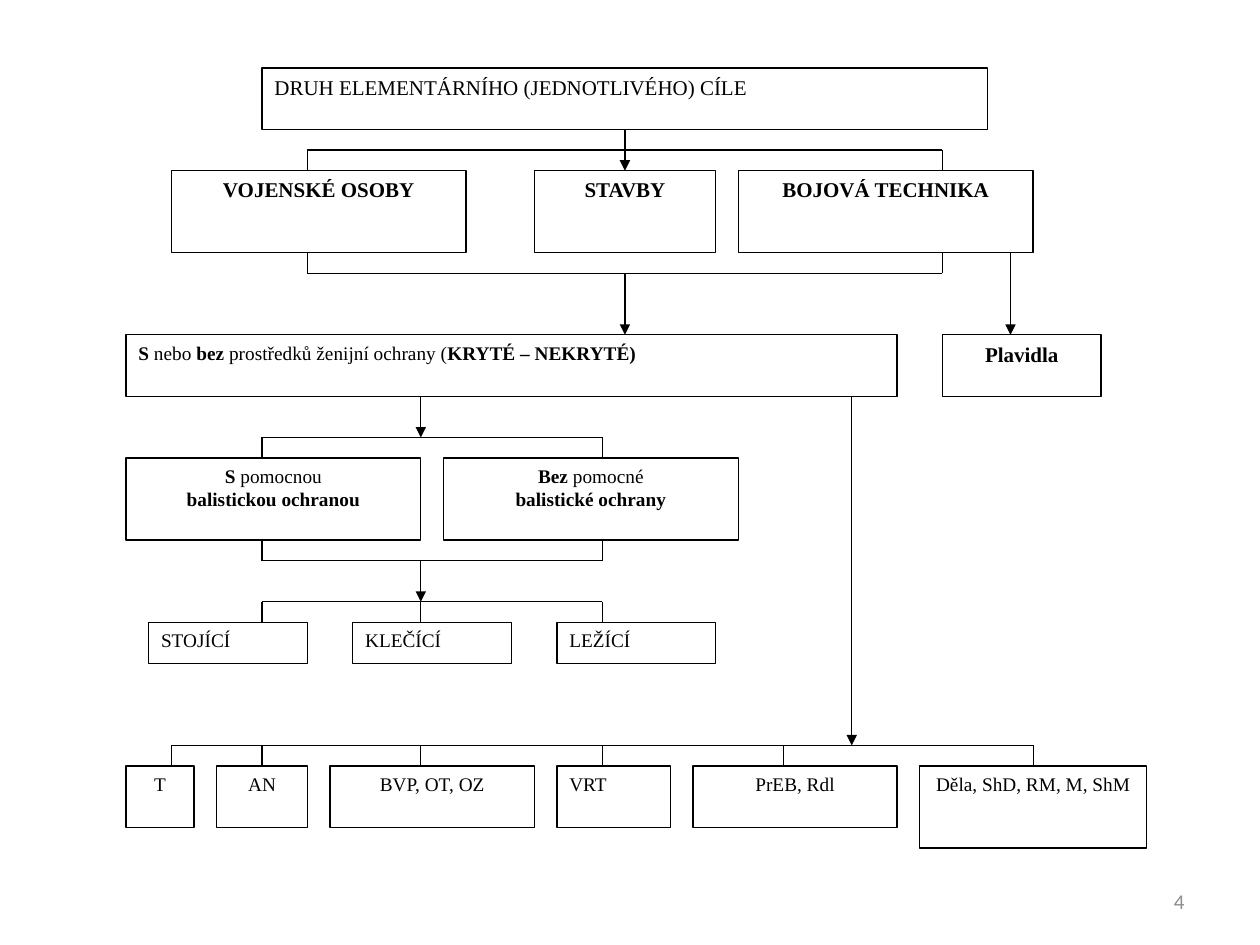
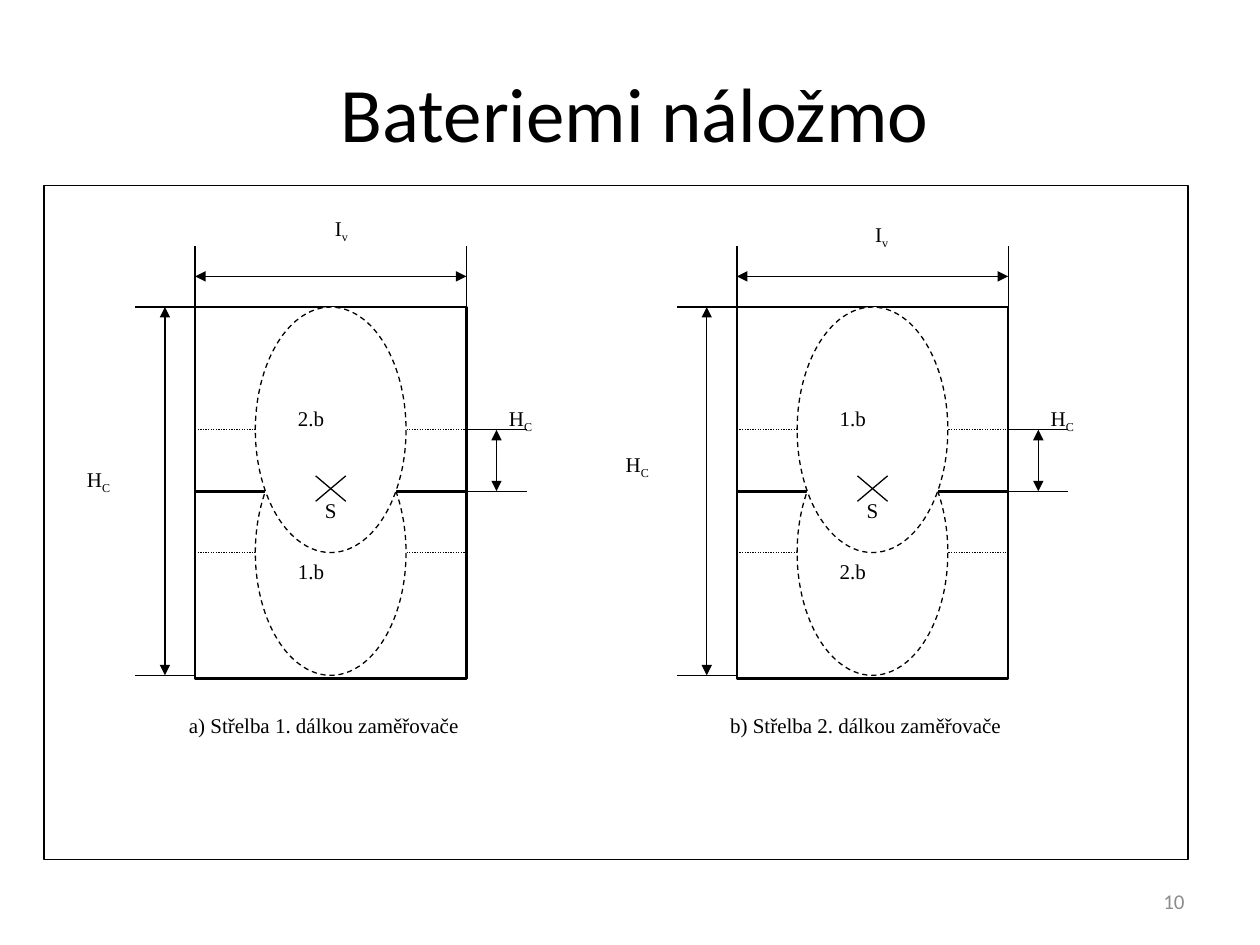
from dataclasses import dataclass

from lxml import etree
from pptx import Presentation
from pptx.dml.color import RGBColor
from pptx.enum.dml import MSO_LINE
from pptx.enum.shapes import MSO_CONNECTOR, MSO_SHAPE
from pptx.enum.text import MSO_ANCHOR, PP_ALIGN
from pptx.oxml.ns import qn
from pptx.util import Emu, Pt

PX = 9144  # 100 px to the inch
RECT, OVAL = MSO_SHAPE.RECTANGLE, MSO_SHAPE.OVAL
STRAIGHT = MSO_CONNECTOR.STRAIGHT
LEFT, CENTER, RIGHT = PP_ALIGN.LEFT, PP_ALIGN.CENTER, PP_ALIGN.RIGHT
MIDDLE = MSO_ANCHOR.MIDDLE
DASH, DOT = MSO_LINE.DASH, MSO_LINE.ROUND_DOT
BLANK, TITLE_ONLY = 6, 5


@dataclass(frozen=True)
class Theme:
    ink: RGBColor = RGBColor(0, 0, 0)
    paper: RGBColor = RGBColor(255, 255, 255)
    muted: RGBColor = RGBColor(0x8C, 0x8C, 0x8C)
    title_font: str = "Calibri"
    diagram_font: str = "Times New Roman"
    title: int = 44
    label: int = 12
    small: int = 11
    thin: float = 0.75
    thick: float = 1.5


T = Theme()


@dataclass(frozen=True)
class Grid:
    """A box in px, divided into equal columns and rows."""
    left: int
    top: int
    width: int
    height: int
    cols: int = 1
    rows: int = 1

    def point(self, c, r):
        return (Emu(round((self.left + c * self.width / self.cols) * PX)),
                Emu(round((self.top + r * self.height / self.rows) * PX)))

    def area(self, c=0, r=0, w=1, h=1):
        x, y = self.point(c, r)
        right, bottom = self.point(c + w, r + h)
        return x, y, right - x, bottom - y


def style_run(r, font, size, color, bold=False):
    r.font.name, r.font.size, r.font.bold = font, Pt(size), bold
    r.font.color.rgb = color


def write(tf, text, size=T.label, align=LEFT, font=T.diagram_font, color=T.ink):
    """Write lines of text; *...* is bold and what follows _ is a subscript."""
    tf.word_wrap = True
    for i, line in enumerate(text.split("\n")):
        p = tf.add_paragraph() if i else tf.paragraphs[0]
        p.alignment = align
        for j, part in enumerate(line.split("*")):
            for k, piece in enumerate(part.split("_")):
                if piece:
                    r = p.add_run()
                    r.text = piece
                    style_run(r, font, size, color, bold=j % 2 == 1)
                    if k:
                        r.font._element.set("baseline", "-25000")


def add_outline(s, area, kind=RECT, width=T.thin, dash=None, filled=True):
    sp = s.shapes.add_shape(kind, *area)
    sp.shadow.inherit = False
    if filled:
        sp.fill.solid()
        sp.fill.fore_color.rgb = T.paper
    else:
        sp.fill.background()
    sp.line.color.rgb, sp.line.width = T.ink, Pt(width)
    if dash:
        sp.line.dash_style = dash
    return sp


def add_box(s, area, text, size=T.label, align=CENTER):
    sp = add_outline(s, area)
    sp.text_frame.vertical_anchor = MSO_ANCHOR.TOP
    write(sp.text_frame, text, size, align)


def add_text(s, area, text, **style):
    tf = s.shapes.add_textbox(*area).text_frame
    write(tf, text, **style)
    return tf


def add_line(s, g, start, end, width=T.thin, dash=None, arrows=()):
    """Join two grid points; arrows may name headEnd (start) and tailEnd (end)."""
    cn = s.shapes.add_connector(STRAIGHT, *g.point(*start), *g.point(*end))
    cn.line.color.rgb, cn.line.width = T.ink, Pt(width)
    if dash:
        cn.line.dash_style = dash
    ln = cn.line._get_or_add_ln()
    for arrow in arrows:
        etree.SubElement(ln, qn(f"a:{arrow}")).set("type", "triangle")
    etree.SubElement(cn._element.spPr, qn("a:effectLst"))


def add_bracket(s, g, columns, bar, tip):
    """A horizontal bar with a stub from each column to the row tip."""
    add_line(s, g, (columns[0], bar), (columns[-1], bar))
    for c in columns:
        add_line(s, g, (c, bar), (c, tip))


def add_page_number(s, number):
    tf = add_text(s, Grid(717, 695, 233, 40).area(), str(number),
                  align=RIGHT, font=T.title_font, color=T.muted)
    tf.vertical_anchor = MIDDLE


def add_title(s, text):
    title = s.shapes.title
    title.left, title.top, title.width, title.height = Grid(54, 26, 900, 125).area()
    tf = title.text_frame
    tf.text = text
    tf.vertical_anchor = MIDDLE
    p = tf.paragraphs[0]
    p.alignment = CENTER
    style_run(p.runs[0], T.title_font, T.title, T.ink)


def target_tree(s, g):
    """Tree of target kinds on a grid of 45 columns and 38 rows."""
    brackets = [((8, 36), 4, 5), ((8, 36), 10, 9), ((6, 21), 18, 19),
                ((6, 21), 24, 23), ((6, 13, 21), 26, 27),
                ((2, 6, 13, 21, 29, 40), 33, 34)]
    for columns, bar, tip in brackets:
        add_bracket(s, g, columns, bar, tip)
    for c, top, bottom in [(22, 3, 5), (22, 10, 13), (39, 9, 13),
                           (13, 16, 18), (13, 24, 26), (32, 16, 33)]:
        add_line(s, g, (c, top), (c, bottom), arrows=["tailEnd"])

    add_box(s, g.area(6, 0, 32, 3), "DRUH ELEMENTÁRNÍHO (JEDNOTLIVÉHO) CÍLE", align=LEFT)
    for c, w, text in [(2, 13, "*VOJENSKÉ OSOBY*"), (18, 8, "*STAVBY*"),
                       (27, 13, "*BOJOVÁ TECHNIKA*")]:
        add_box(s, g.area(c, 5, w, 4), text)
    add_box(s, g.area(0, 13, 34, 3),
            "*S* nebo *bez* prostředků ženijní ochrany (*KRYTÉ – NEKRYTÉ)*", T.small, LEFT)
    add_box(s, g.area(36, 13, 7, 3), "*Plavidla*")
    for c, text in [(0, "*S* pomocnou\n*balistickou ochranou*"),
                    (14, "*Bez* pomocné\n*balistické ochrany*")]:
        add_box(s, g.area(c, 19, 13, 4), text, T.small)
    for i, text in enumerate(["STOJÍCÍ", "KLEČÍCÍ", "LEŽÍCÍ"]):
        add_box(s, g.area(1 + 9 * i, 27, 7, 2), text, T.small, LEFT)

    c = 0
    for w, h, text, align in [
            (3, 3, "T", CENTER), (4, 3, "AN", CENTER), (9, 3, "BVP, OT, OZ", CENTER),
            (5, 3, "VRT", LEFT), (9, 3, "PrEB, Rdl", CENTER),
            (10, 4, "Děla, ShD, RM, M, ShM", CENTER)]:
        add_box(s, g.area(c, 34, w, h), text, T.small, align)
        c += w + 1


def fire_panel(s, g, upper, lower, caption, width_label, depth_label):
    """Two overlapping battery ellipses with dimensions, on a 13 by 14 grid."""
    both = ["headEnd", "tailEnd"]
    left, right, top, bottom = 2, 11, 2, 14
    add_outline(s, g.area(left, top, right - left, 12.1), width=T.thick)
    for r, width, dash in [(8, T.thick, None), (6, T.thin, DOT), (10, T.thin, DOT)]:
        add_line(s, g, (left, r), (right, r), width, dash)
    for c in (left, right):
        add_line(s, g, (c, top), (c, 0))
    for r in (top, bottom):
        add_line(s, g, (left, r), (0, r))
    for r in (6, 8):
        add_line(s, g, (right, r), (13, r))
    for start, end in [((left, 1), (right, 1)), ((1, top), (1, bottom)),
                       ((12, 6), (12, 8))]:
        add_line(s, g, start, end, arrows=both)
    for r in (6, 2):
        add_outline(s, g.area(4, r, 5, 8), OVAL, dash=DASH)
    for r1, r2 in [(7.5, 8.33), (8.33, 7.5)]:
        add_line(s, g, (6, r1), (7, r2))

    add_text(s, g.area(5, 5, 3.6, 2), upper)
    add_text(s, g.area(5, 10, 3.6, 2), lower)
    add_text(s, g.area(5, 8, 3, 3), "S", align=CENTER)
    add_text(s, g.area(12, 5, 4.5, 6), "H_C")
    add_text(s, g.area(*depth_label, 4.5, 3), "H_C")
    add_text(s, g.area(*width_label, 3.6, 4), "I_v", align=CENTER)
    add_text(s, g.area(0, 15, 12.55, 4), caption, align=CENTER)


def target_slide(prs):
    s = prs.slides.add_slide(prs.slide_layouts[BLANK])
    target_tree(s, Grid(100, 54, 810, 619, 45, 38))
    add_page_number(s, 4)


def battery_slide(prs):
    s = prs.slides.add_slide(prs.slide_layouts[TITLE_ONLY])
    add_title(s, "Bateriemi náložmo")
    add_outline(s, Grid(35, 147, 908, 535).area(), filled=False)
    panels = [
        (107, "2.b", "1.b", "a) Střelba 1. dálkou zaměřovače", (5.06, -1.2), (-2, 7)),
        (537, "1.b", "2.b", "b) Střelba 2. dálkou zaměřovače", (5, -1), (-2.1, 6.5)),
    ]
    for x, *parts in panels:
        fire_panel(s, Grid(x, 195, 311, 341, 13, 14), *parts)
    add_page_number(s, 10)


def main():
    prs = Presentation()
    prs.slide_width, prs.slide_height = Emu(1000 * PX), Emu(750 * PX)
    target_slide(prs)
    battery_slide(prs)
    prs.save("out.pptx")


if __name__ == "__main__":
    main()
